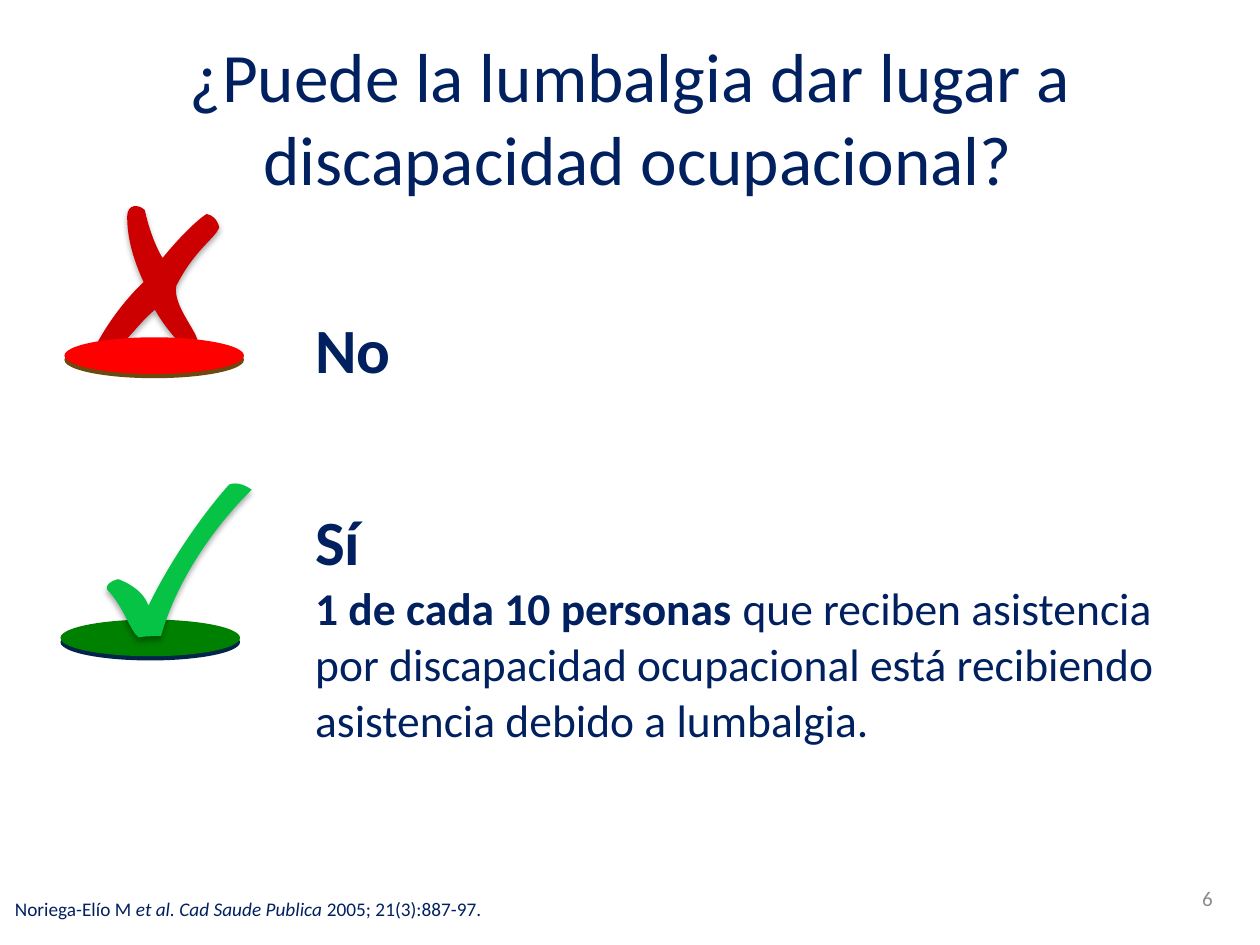
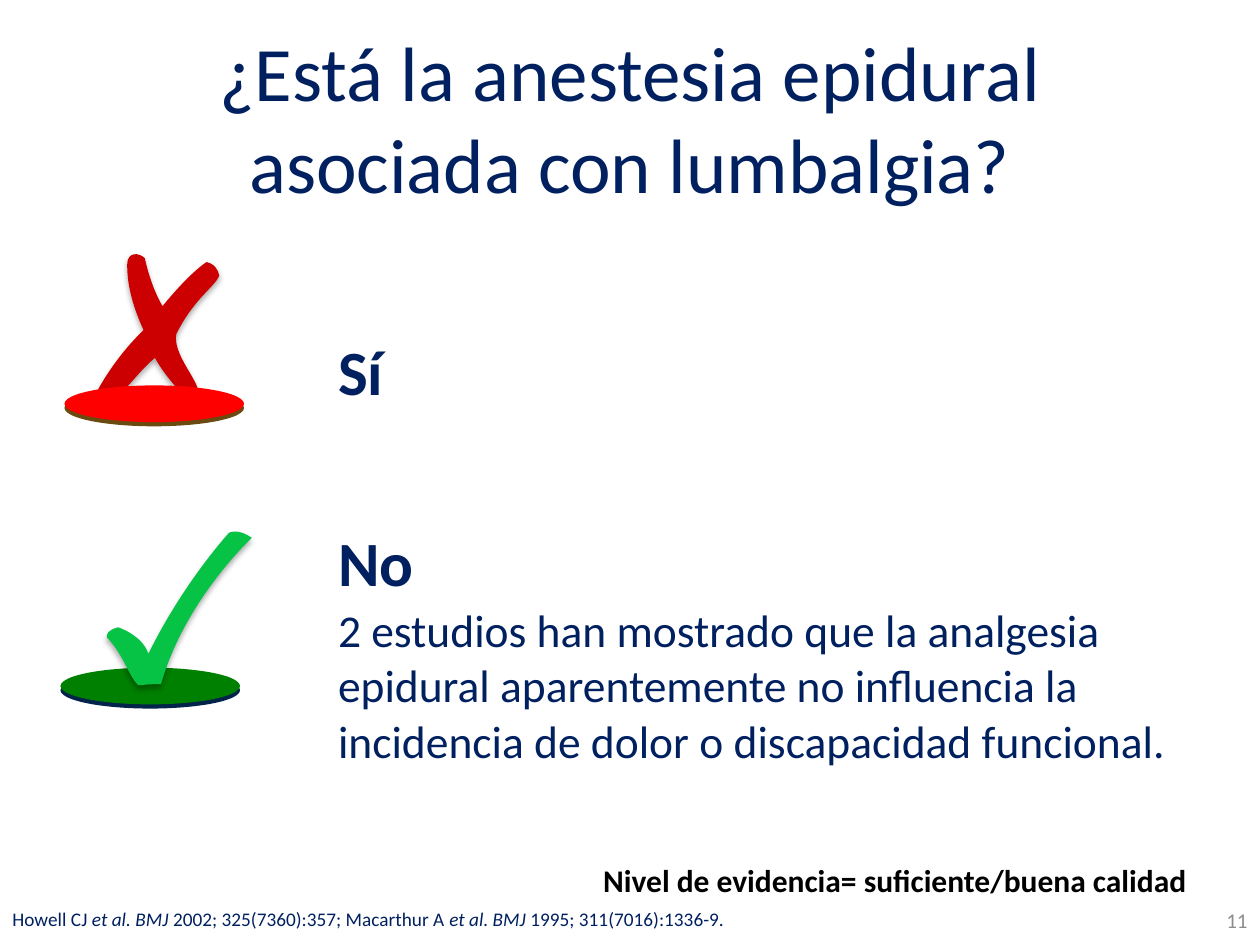
import dataclasses

import lxml.etree
import pptx
import pptx.dml.color
import pptx.enum.shapes
import pptx.enum.text
import pptx.oxml.ns
import pptx.util

Cm = pptx.util.Cm
Pt = pptx.util.Pt
qn = pptx.oxml.ns.qn
ANCHOR = pptx.enum.text.MSO_ANCHOR
ALIGN = pptx.enum.text.PP_ALIGN


@dataclasses.dataclass(frozen=True)
class Theme:
    """Colours, font and type sizes shared by the slides."""
    font: str = "Calibri"
    navy: str = "002060"
    grey: str = "8C8C8C"
    black: str = "000000"
    cross: str = "CC0000"
    cross_base: str = "FF0000"
    cross_edge: str = "6B4A10"
    check: str = "06C245"
    check_base: str = "008000"
    check_edge: str = "02244A"
    answer: float = 36
    detail: float = 26
    evidence: float = 18
    number: float = 12
    reference: float = 11


THEME = Theme()
OUTLINE_UNIT = Cm(2.54) / 100

CROSS_START = (2, 109)
CROSS_CURVES = [
    ((2, 109), (15, 84), (38, 62)),
    ((26, 36), (25, 19), (25, 10)),
    ((25, 0), (34, 0), (39, 5)),
    ((39, 5), (43, 26), (53, 43)),
    ((76, 15), (88, 8), (88, 8)),
    ((97, 10), (98, 19), (98, 19)),
    ((94, 28), (78, 37), (64, 65)),
    ((61, 80), (79, 99), (81, 109)),
    ((77, 113), (79, 113), (73, 117)),
    ((73, 117), (57, 102), (47, 84)),
    ((34, 95), (31, 102), (11, 121)),
    ((11, 121), (0, 121), (2, 109)),
]
CHECK_START = (1, 87)
CHECK_CURVES = [
    ((14, 100), (19, 119), (26, 125)),
    ((35, 124), (44, 124), (44, 124)),
    ((63, 57), (116, 8), (116, 8)),
    ((105, 0), (98, 4), (98, 4)),
    ((98, 4), (62, 43), (34, 100)),
    ((29, 85), (10, 79), (10, 79)),
    ((10, 79), (0, 81), (1, 87)),
]


def rgb(color):
    """Turn a hex string into a colour."""
    return pptx.dml.color.RGBColor.from_string(color)


def write(p, runs, size, color=THEME.navy):
    """Add runs given as (text, style), where style holds b and i flags."""
    for text, style in runs:
        r = p.add_run()
        r.text = text
        r.font.name = THEME.font
        r.font.size = Pt(size)
        r.font.color.rgb = rgb(color)
        r.font.bold = "b" in style
        r.font.italic = "i" in style


def paint(sp, color, shade, blur, dist, alpha):
    """Fill a shape without outline and drop a shadow straight below it."""
    sp.fill.solid()
    sp.fill.fore_color.rgb = rgb(color)
    sp.line.fill.background()
    sp.shadow.inherit = False
    effects = sp.element.spPr.find(qn("a:effectLst"))
    shadow = lxml.etree.SubElement(
        effects, qn("a:outerShdw"), blurRad=str(Pt(blur)), dist=str(Pt(dist)),
        dir="5400000", algn="t", rotWithShape="0")
    tint = lxml.etree.SubElement(shadow, qn("a:srgbClr"), val=shade)
    lxml.etree.SubElement(tint, qn("a:alpha"), val=str(alpha * 1000))


def add_base(slide, left, top, color, edge):
    """Draw the flat disc under a mark, with its darker edge."""
    sp = slide.shapes.add_shape(
        pptx.enum.shapes.MSO_SHAPE.OVAL, left, top, Cm(3.62), Cm(0.74))
    paint(sp, color, edge, 0, 2.4, 100)


def add_outline(slide, left, top, start, curves, color):
    """Draw a closed outline, turning each three segments into one cubic curve."""
    builder = slide.shapes.build_freeform(*start, scale=OUTLINE_UNIT)
    builder.add_line_segments([pt for curve in curves for pt in curve], close=False)
    sp = builder.convert_to_shape(left, top)
    segments = list(sp.element.iter(qn("a:lnTo")))
    outline = segments[0].getparent()
    for first in range(0, len(segments), 3):
        curve = lxml.etree.SubElement(outline, qn("a:cubicBezTo"))
        for segment in segments[first:first + 3]:
            curve.append(segment[0])
            outline.remove(segment)
    lxml.etree.SubElement(outline, qn("a:close"))
    paint(sp, color, THEME.black, 3.5, 2.2, 32)


def add_marks(slide, left, top):
    """Draw the cross above the check mark, each on its disc."""
    add_outline(slide, left + Cm(0.89), top, CROSS_START, CROSS_CURVES, THEME.cross)
    add_base(slide, left + Cm(0.26), top + Cm(2.69), THEME.cross_base, THEME.cross_edge)
    add_base(slide, left + Cm(0.18), top + Cm(8.38), THEME.check_base, THEME.check_edge)
    add_outline(slide, left + Cm(1.09), top + Cm(5.56), CHECK_START, CHECK_CURVES, THEME.check)


def add_title(slide, text, size):
    """Place and format the title."""
    title = slide.shapes.title
    title.left, title.top, title.width, title.height = (
        Cm(1.27), Cm(0.76), Cm(22.86), Cm(3.18))
    tf = title.text_frame
    tf.auto_size = pptx.enum.text.MSO_AUTO_SIZE.NONE
    tf.vertical_anchor = ANCHOR.MIDDLE
    tf.text = text
    p = tf.paragraphs[0]
    p.alignment = ALIGN.CENTER
    for r in p.runs:
        r.font.name = THEME.font
        r.font.size = Pt(size)
        r.font.color.rgb = rgb(THEME.navy)


def add_answers(slide, left, top, wrong, right, detail):
    """Place the wrong answer over the right one and its explanation."""
    frame = slide.shapes.add_table(2, 1, left, top, Cm(18.14), Cm(11.97))
    table = frame.table
    table.first_row = table.horz_banding = False
    for row, height in zip(table.rows, (5.92, 6.05)):
        row.height = Cm(height)
        row.cells[0].fill.background()
    wrong_cell, right_cell = table.cell(0, 0), table.cell(1, 0)
    wrong_cell.vertical_anchor = ANCHOR.MIDDLE
    for cell, answer in ((wrong_cell, wrong), (right_cell, right)):
        write(cell.text_frame.paragraphs[0], [(answer, "b")], THEME.answer)
    write(right_cell.text_frame.add_paragraph(), detail, THEME.detail)


def add_text(slide, box, runs, size, color=THEME.navy, wrap=True):
    """Add a text box of one paragraph and return its frame."""
    tf = slide.shapes.add_textbox(*map(Cm, box)).text_frame
    tf.word_wrap = wrap
    write(tf.paragraphs[0], runs, size, color)
    return tf


def add_number(slide, left, top, number):
    """Add the slide number."""
    tf = add_text(slide, (left, top, 5.92, 1.02), [(number, "")],
                  THEME.number, THEME.grey)
    tf.vertical_anchor = ANCHOR.MIDDLE
    tf.paragraphs[0].alignment = ALIGN.RIGHT


def add_reference(slide, left, top, runs):
    """Add the source line at the foot."""
    tf = add_text(slide, (left, top, 24, 0.48), runs, THEME.reference)
    tf.margin_left = tf.margin_right = tf.margin_top = tf.margin_bottom = 0
    tf.vertical_anchor = ANCHOR.BOTTOM


def add_question(prs, title, title_size, marks_top, answers_at, answers):
    """Add a question slide with its marks and answers."""
    slide = prs.slides.add_slide(prs.slide_layouts[5])
    add_title(slide, title, title_size)
    add_marks(slide, Cm(1.04), Cm(marks_top))
    add_answers(slide, *map(Cm, answers_at), *answers)
    return slide


def main():
    """Build both slides and save them."""
    prs = pptx.Presentation()
    prs.slide_width, prs.slide_height = Cm(25.4), Cm(19.05)

    slide = add_question(
        prs, "¿Puede la lumbalgia dar lugar a\v discapacidad ocupacional?", 39.6,
        4.11, (6.1, 4.14),
        ("No", "Sí", [
            ("1 de cada 10 personas ", "b"),
            ("que reciben asistencia por discapacidad ocupacional está "
             "recibiendo asistencia debido a lumbalgia.", "")]))
    add_number(slide, 18.78, 17.6, "6")
    add_reference(slide, 0.3, 18.08, [
        ("Noriega-Elío M ", ""), ("et al. Cad Saude Publica ", "i"),
        ("2005; 21(3):887-97.", "")])

    slide = add_question(
        prs, "¿Está la anestesia epidural asociada con lumbalgia?", 44,
        5.08, (6.56, 4.57),
        ("Sí", "No", [
            ("2 estudios han mostrado que la analgesia epidural aparentemente "
             "no influencia la incidencia de dolor o discapacidad funcional.", "")]))
    add_number(slide, 19.48, 18.03, "11")
    add_reference(slide, 0.25, 18.28, [
        ("Howell CJ ", ""), ("et al. BMJ", "i"),
        (" 2002; 325(7360):357; Macarthur A ", ""), ("et al. BMJ", "i"),
        (" 1995; 311(7016):1336-9.", "")])
    add_text(slide, (11.91, 17.23, 12.37, 1.02),
             [("Nivel de evidencia= suficiente/buena calidad", "b")],
             THEME.evidence, THEME.black, wrap=False)

    prs.save("out.pptx")


if __name__ == "__main__":
    main()
